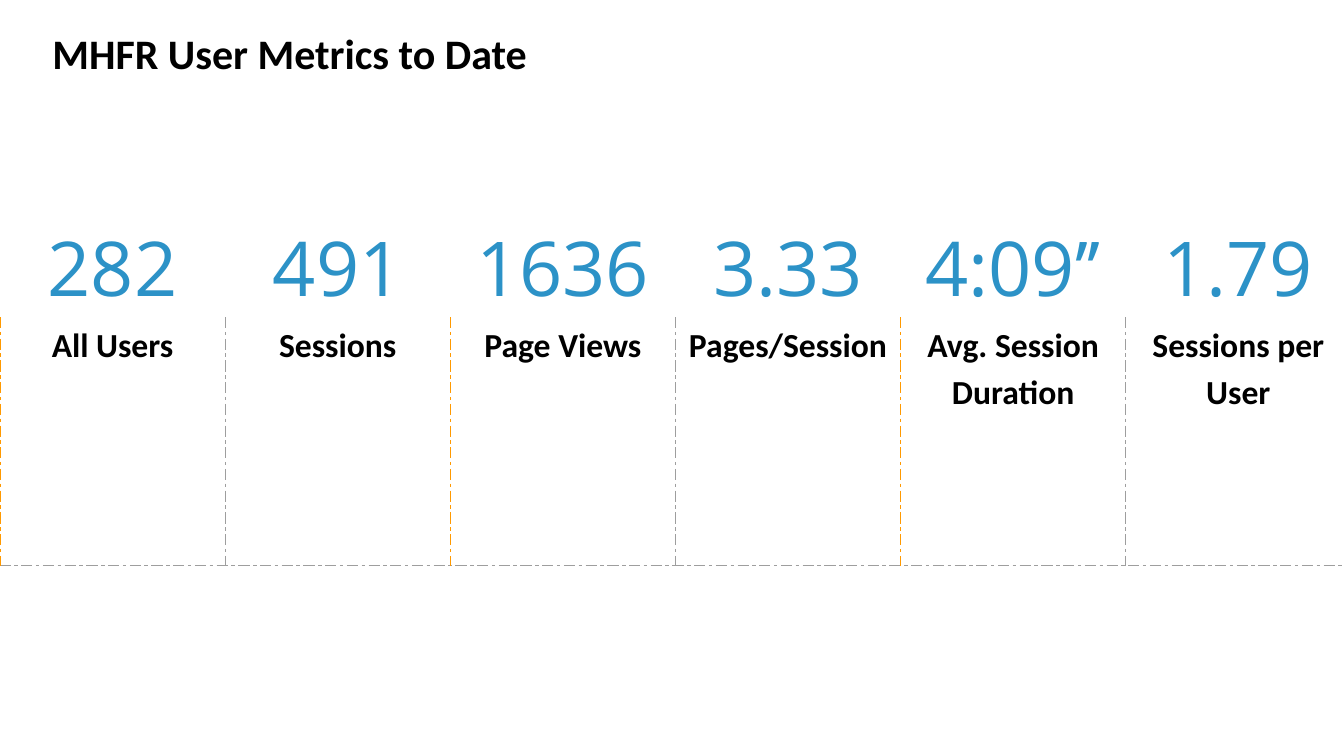
from lxml import etree
from pptx import Presentation
from pptx.dml.color import RGBColor
from pptx.enum.text import MSO_ANCHOR, PP_ALIGN
from pptx.oxml.ns import qn
from pptx.util import Inches, Pt

CENTER, LEFT = PP_ALIGN.CENTER, PP_ALIGN.LEFT
TOP, MIDDLE, BOTTOM = MSO_ANCHOR.TOP, MSO_ANCHOR.MIDDLE, MSO_ANCHOR.BOTTOM
WHITE, BLACK, BLUE = "FFFFFF", "000000", "2C92C7"
ORANGE, GREY = "FF9900", "9E9E9E"
TABLE_W, TABLE_TOP = 13.4, 1.39
ROW_HEIGHTS = (1.76, 2.46)
METRICS = [
    ("282", "All Users"),
    ("491", "Sessions"),
    ("1636", "Page Views"),
    ("3.33", "Pages/Session"),
    ("4:09’’", "Avg. Session Duration"),
    ("1.79", "Sessions per User"),
]


def rgb(color):
    """Turn a hex string into a colour."""
    return RGBColor.from_string(color)


def style(p, font, size, color, bold, align, spacing):
    """Format a whole paragraph."""
    p.alignment, p.line_spacing = align, spacing
    p.font.name, p.font.size, p.font.bold = font, Pt(size), bold
    p.font.color.rgb = rgb(color)


def set_borders(cell, left, right, top, bottom):
    """Draw dash-dot lines on the four sides of a cell."""
    tcPr = cell._tc.get_or_add_tcPr()
    sides = zip(("lnL", "lnR", "lnT", "lnB"), (left, right, top, bottom))
    for i, (side, color) in enumerate(sides):
        ln = etree.Element(qn(f"a:{side}"), w=str(Pt(0.75)))
        fill = etree.SubElement(ln, qn("a:solidFill"))
        etree.SubElement(fill, qn("a:srgbClr"), val=color)
        etree.SubElement(ln, qn("a:prstDash"), val="dashDot")
        tcPr.insert(i, ln)


def fill_cell(cell, text, anchor):
    """Put text in a cell with narrow margins."""
    cell.text = text
    cell.vertical_anchor = anchor
    cell.margin_left = cell.margin_right = Inches(0.03)
    cell.margin_top = cell.margin_bottom = Inches(0.02)
    return cell.text_frame.paragraphs[0]


def add_title(s, text):
    """Place and format the slide title."""
    sp = s.shapes.title
    sp.left, sp.top = Inches(0.42), 0
    sp.width, sp.height = Inches(12.91), Inches(1.11)
    tf = sp.text_frame
    tf.text = text
    tf.vertical_anchor = MIDDLE
    style(tf.paragraphs[0], "Calibri", 30, BLACK, True, LEFT, 0.9)


def add_metrics(s, metrics):
    """Add the table of large values above their labels."""
    n = len(metrics)
    table = s.shapes.add_table(2, n, 0, Inches(TABLE_TOP), Inches(TABLE_W),
                               Inches(sum(ROW_HEIGHTS))).table
    table.first_row = table.horz_banding = False
    for row, height in zip(table.rows, ROW_HEIGHTS):
        row.height = Inches(height)
    for i, (value, label) in enumerate(metrics):
        table.columns[i].width = Inches(TABLE_W / n)
        left, right = (ORANGE, GREY) if i % 2 == 0 else (GREY, ORANGE)
        cell = table.cell(0, i)
        p = fill_cell(cell, value, BOTTOM)
        style(p, "Open Sans", 54, BLUE, False, CENTER, 0.9)
        cell.fill.background()
        set_borders(cell, WHITE, WHITE, WHITE, WHITE)
        cell = table.cell(1, i)
        p = fill_cell(cell, label, TOP)
        style(p, "Calibri", 24, BLACK, True, CENTER, 1.15)
        cell.fill.solid()
        cell.fill.fore_color.rgb = rgb(WHITE)
        set_borders(cell, left, right, WHITE, GREY)


def main():
    """Build the slide and save it."""
    prs = Presentation()
    prs.slide_width, prs.slide_height = Inches(13.33), Inches(7.5)
    s = prs.slides.add_slide(prs.slide_layouts[5])
    add_title(s, "MHFR User Metrics to Date")
    add_metrics(s, METRICS)
    prs.save("out.pptx")


if __name__ == "__main__":
    main()
